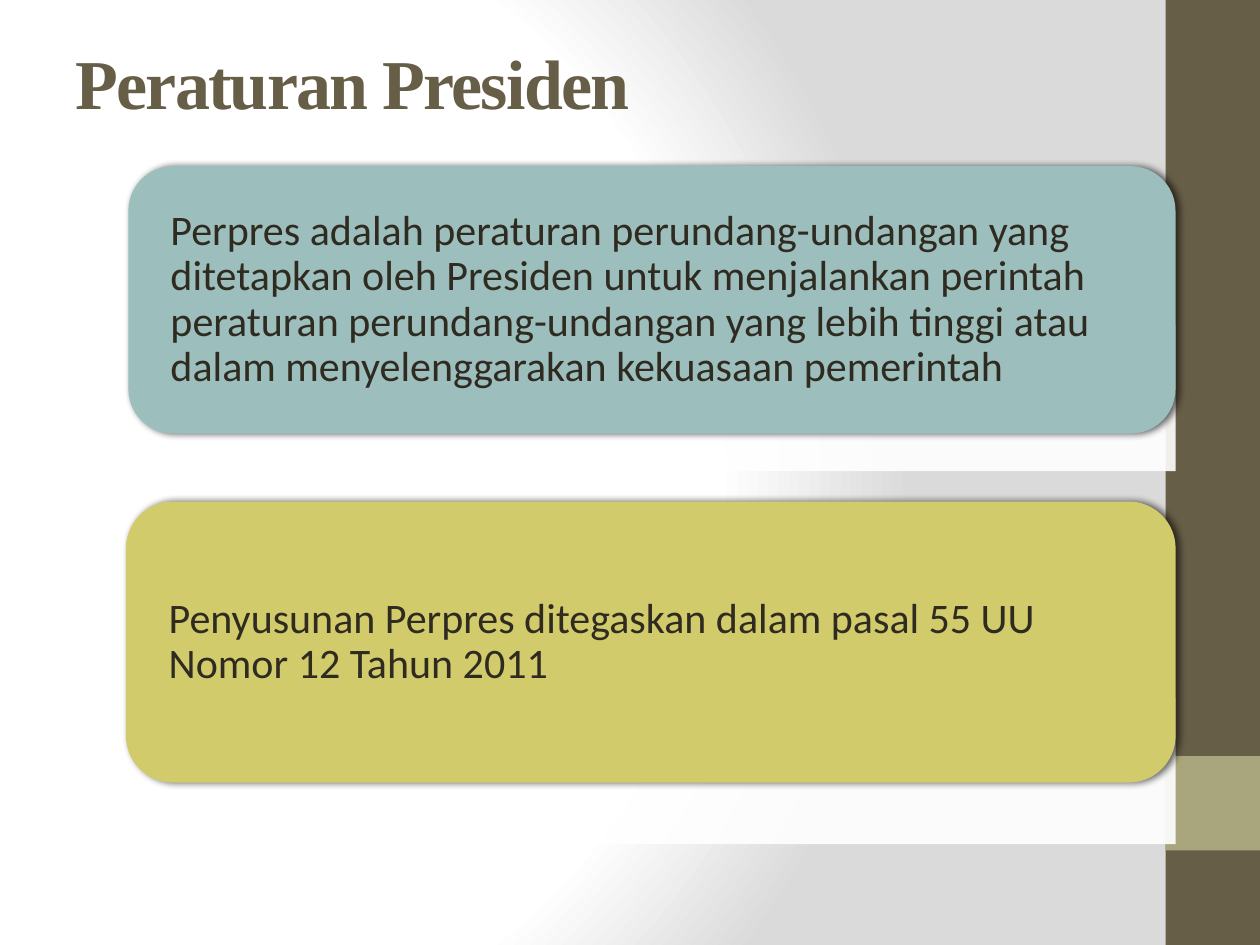
import pptx
import pptx.util
import pptx.dml.color
import pptx.enum.shapes
import pptx.enum.text
import pptx.oxml
import pptx.oxml.ns
from lxml import etree

Pt = pptx.util.Pt
Kind = pptx.enum.shapes.MSO_SHAPE
Align = pptx.enum.text.PP_ALIGN
Anchor = pptx.enum.text.MSO_ANCHOR
qn = pptx.oxml.ns.qn

TITLE = "Peraturan Presiden"
BARS = [
    ((666, 0, 54, 540), "675E47"),
    ((666, 432, 54, 54), "A9A57C"),
]
CARDS = [
    ("Perpres adalah peraturan perundang-undangan yang ditetapkan oleh Presiden "
     "untuk menjalankan perintah peraturan perundang-undangan yang lebih tinggi "
     "atau dalam menyelenggarakan kekuasaan pemerintah",
     (73.4, 95, 598.4, 152.8), 185.8, "9CBEBD"),
    ("Penyusunan Perpres ditegaskan dalam pasal 55 UU Nomor 12 Tahun 2011",
     (72, 286.6, 599.8, 160.6), 398.9, "D2CB6C"),
]
STOPS = [(0, "FFFFFF"), (75, "FFFFFF"), (100, "DADADA")]
FOCUS = {"l": 20, "t": 50, "r": 100, "b": 50}


def color(code):
    return pptx.dml.color.RGBColor.from_string(code)


def add(parent, tag, **attrs):
    node = etree.SubElement(parent, qn(tag))
    for key, val in attrs.items():
        node.set(key, str(val))
    return node


def block(slide, kind, box, fill):
    shape = slide.shapes.add_shape(kind, *map(Pt, box))
    shape.shadow.inherit = False
    shape.fill.solid()
    shape.fill.fore_color.rgb = color(fill)
    shape.line.fill.background()
    return shape


def fade(shape, alpha):
    tint = shape.fill._xPr.find(".//" + qn("a:srgbClr"))
    add(tint, "a:alpha", val=alpha * 1000)


def shade(shape):
    root = shape._element.spPr.find(qn("a:effectLst"))
    drop = add(root, "a:outerShdw", blurRad=Pt(4), dist=Pt(2), dir=0,
               algn="ctr", rotWithShape=0)
    tint = add(drop, "a:srgbClr", val="000000")
    add(tint, "a:alpha", val=60000)


def style(para, font, size, code):
    para.alignment = Align.LEFT
    para.font.name = font
    para.font.size = Pt(size)
    para.font.color.rgb = color(code)


def backdrop(slide):
    fill = slide.background.fill
    fill.gradient()
    grad = fill._xPr.find(qn("a:gradFill"))
    for child in list(grad):
        grad.remove(child)
    stops = add(grad, "a:gsLst")
    for pos, code in STOPS:
        add(add(stops, "a:gs", pos=pos * 1000), "a:srgbClr", val=code)
    ring = add(grad, "a:path", path="circle")
    add(ring, "a:fillToRect", **{k: v * 1000 for k, v in FOCUS.items()})


def head(slide):
    title = slide.shapes.title
    title.left, title.top, title.width, title.height = map(Pt, (36, 21.6, 648, 50.4))
    frame = title.text_frame
    frame.text = TITLE
    frame.auto_size = pptx.enum.text.MSO_AUTO_SIZE.NONE
    frame.vertical_anchor = Anchor.MIDDLE
    para = frame.paragraphs[0]
    style(para, "Times New Roman", 40, "675E47")
    para.font.bold = True
    para.runs[0].font._element.set("spc", "-100")


def card(slide, text, box, top, fill):
    fade(block(slide, Kind.RECTANGLE, (41.8, top, 630, 83.5), "FFFFFF"), 90)
    shape = block(slide, Kind.ROUNDED_RECTANGLE, box, fill)
    shade(shape)
    frame = shape.text_frame
    frame.text = text
    frame.word_wrap = True
    frame.vertical_anchor = Anchor.MIDDLE
    frame.margin_left = frame.margin_right = Pt(16.6)
    frame.margin_top = frame.margin_bottom = 0
    para = frame.paragraphs[0]
    style(para, "Calibri", 24, "2F2B20")
    para.line_spacing = 0.9


def main():
    deck = pptx.Presentation()
    deck.slide_width, deck.slide_height = Pt(720), Pt(540)
    slide = deck.slides.add_slide(deck.slide_layouts[5])
    backdrop(slide)
    for box, fill in BARS:
        block(slide, Kind.RECTANGLE, box, fill)
    head(slide)
    for item in CARDS:
        card(slide, *item)
    deck.save("out.pptx")


if __name__ == "__main__":
    main()
